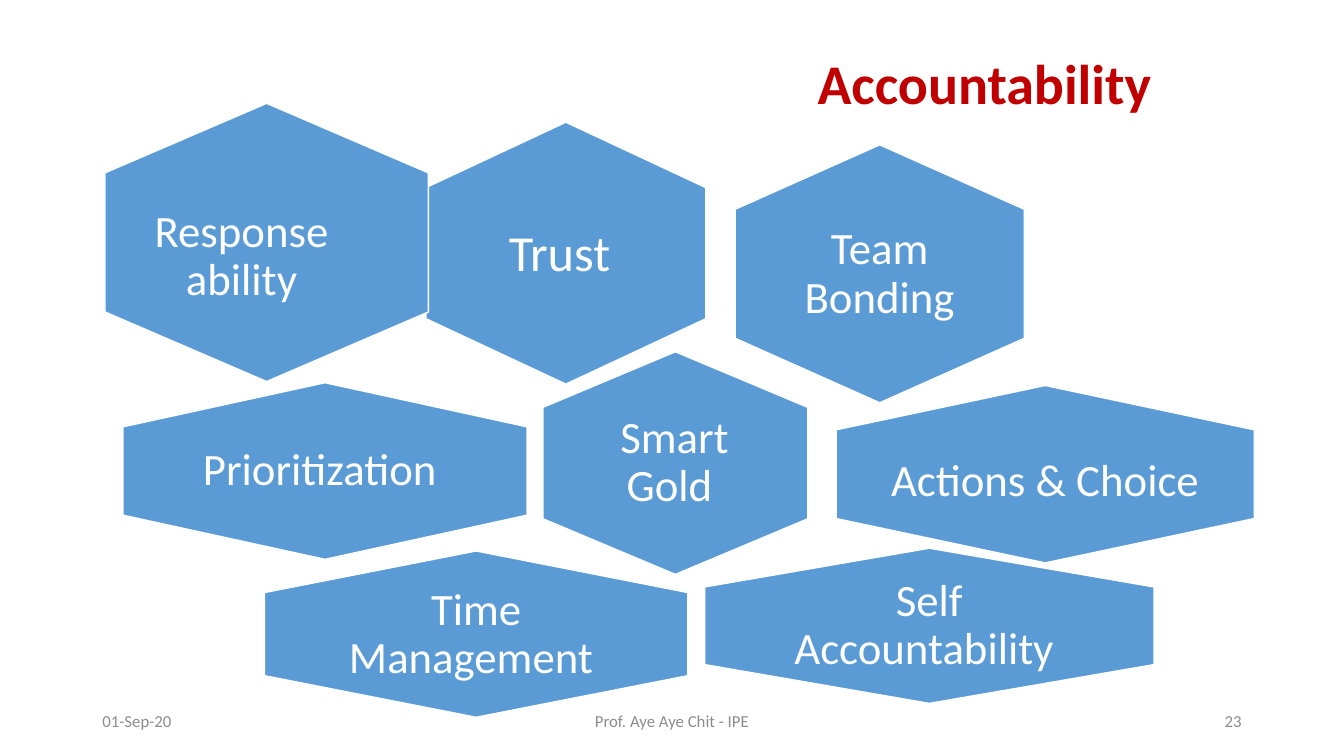
from pptx import Presentation
from pptx.dml.color import RGBColor
from pptx.enum.shapes import MSO_SHAPE
from pptx.enum.text import MSO_ANCHOR, MSO_AUTO_SIZE, PP_ALIGN
from pptx.util import Cm, Pt

FONT = "Calibri"
WHITE, BLUE, RED, GREY = "FFFFFF", "5B9BD5", "C00000", "8C8C8C"

# centre, visible size, label size, label shift (cm), inset, line spacing, runs
HEXAGONS = [
    ((14.26, 6.38), (7.06, 6.6), (4.85, 4.55), (0, 0), 0.25, 0.9,
     [("Trust", 36), (" ", 40)]),
    ((8.19, 11.87), (10.19, 4.45), (6.81, 2.97), (0, 0), 0.33, 0.9,
     [("Prioritization ", 32)]),
    ((22.17, 6.9), (7.29, 6.5), (4.88, 4.34), (0, 0.02), 0.33, 0.9,
     [("Team Bonding", 32)]),
    ((12, 15.98), (10.67, 4.19), (7.11, 2.79), (0, 0.02), 0.33, 0.9,
     [("Time Management ", 32)]),
    ((26.34, 11.95), (10.54, 4.47), (10.54, 2.95), (0, 0.11), 0.33, 1.0,
     [("Actions & Choice", 32)]),
    ((23.42, 15.77), (11.33, 3.91), (7.54, 2.59), (0, 0), 0.33, 0.9,
     [("Self Accountability ", 32)]),
    ((6.72, 6.11), (8.15, 7.01), (5, 3.89), (-0.63, 0.36), 0.3, 0.9,
     [("Response ability", 32)]),
    ((17.02, 11.67), (6.68, 5.61), (4.45, 3.73), (-0.02, 0), 0.3, 0.9,
     [("Smart Gold ", 32)]),
]


def rgb(value):
    return RGBColor.from_string(value)


def box_around(x, y, w, h):
    return Cm(x - w / 2), Cm(y - h / 2), Cm(w), Cm(h)


def add_run(p, text, size, color, bold=False):
    r = p.add_run()
    r.text = text
    r.font.name = FONT
    r.font.size = Pt(size)
    r.font.bold = bold
    r.font.color.rgb = rgb(color)


def add_label(s, box, runs, color, align, inset=None, spacing=1.0):
    tf = s.shapes.add_textbox(*box).text_frame
    tf.word_wrap = True
    tf.vertical_anchor = MSO_ANCHOR.MIDDLE
    if inset is not None:
        tf.margin_left = tf.margin_right = Cm(inset)
        tf.margin_top = tf.margin_bottom = Cm(inset)
    p = tf.paragraphs[0]
    p.alignment = align
    p.line_spacing = spacing
    for text, size in runs:
        add_run(p, text, size, color)


def add_hexagon(s, centre, size, label_size, shift, inset, spacing, runs):
    x, y = centre
    w, h = size
    # The quarter turn swaps width and height
    sp = s.shapes.add_shape(MSO_SHAPE.HEXAGON, *box_around(x, y, h, w))
    sp.rotation = 90
    sp.adjustments[0] = 0.25
    sp.adjustments[1] = 1.1547
    sp.shadow.inherit = False
    sp.fill.solid()
    sp.fill.fore_color.rgb = rgb(BLUE)
    sp.line.color.rgb = rgb(WHITE)
    sp.line.width = Pt(1)
    add_label(s, box_around(x + shift[0], y + shift[1], *label_size),
              runs, WHITE, PP_ALIGN.CENTER, inset, spacing)


def set_title(s, text):
    sp = s.shapes.title
    sp.left, sp.top, sp.width, sp.height = Cm(20.35), Cm(1.09), Cm(10.16), Cm(1.96)
    tf = sp.text_frame
    tf.word_wrap = True
    tf.auto_size = MSO_AUTO_SIZE.SHAPE_TO_FIT_TEXT
    tf.vertical_anchor = MSO_ANCHOR.TOP
    p = tf.paragraphs[0]
    p.alignment = PP_ALIGN.LEFT
    add_run(p, text, 40, RED, bold=True)


def add_footer(s, left, width, text, align):
    box = Cm(left), Cm(17.65), Cm(width), Cm(1.02)
    add_label(s, box, [(text, 12)], GREY, align)


def main():
    prs = Presentation()
    prs.slide_width, prs.slide_height = Cm(33.87), Cm(19.05)
    s = prs.slides.add_slide(prs.slide_layouts[5])

    # Title
    set_title(s, "Accountability")

    # Footer: date, author, slide number
    add_footer(s, 2.33, 7.62, "01-Sep-20", PP_ALIGN.LEFT)
    add_footer(s, 11.22, 11.43, "Prof. Aye Aye Chit - IPE", PP_ALIGN.CENTER)
    add_footer(s, 23.92, 7.62, "23", PP_ALIGN.RIGHT)

    # Hexagons with their labels
    for hexagon in HEXAGONS:
        add_hexagon(s, *hexagon)

    prs.save("out.pptx")


if __name__ == "__main__":
    main()
